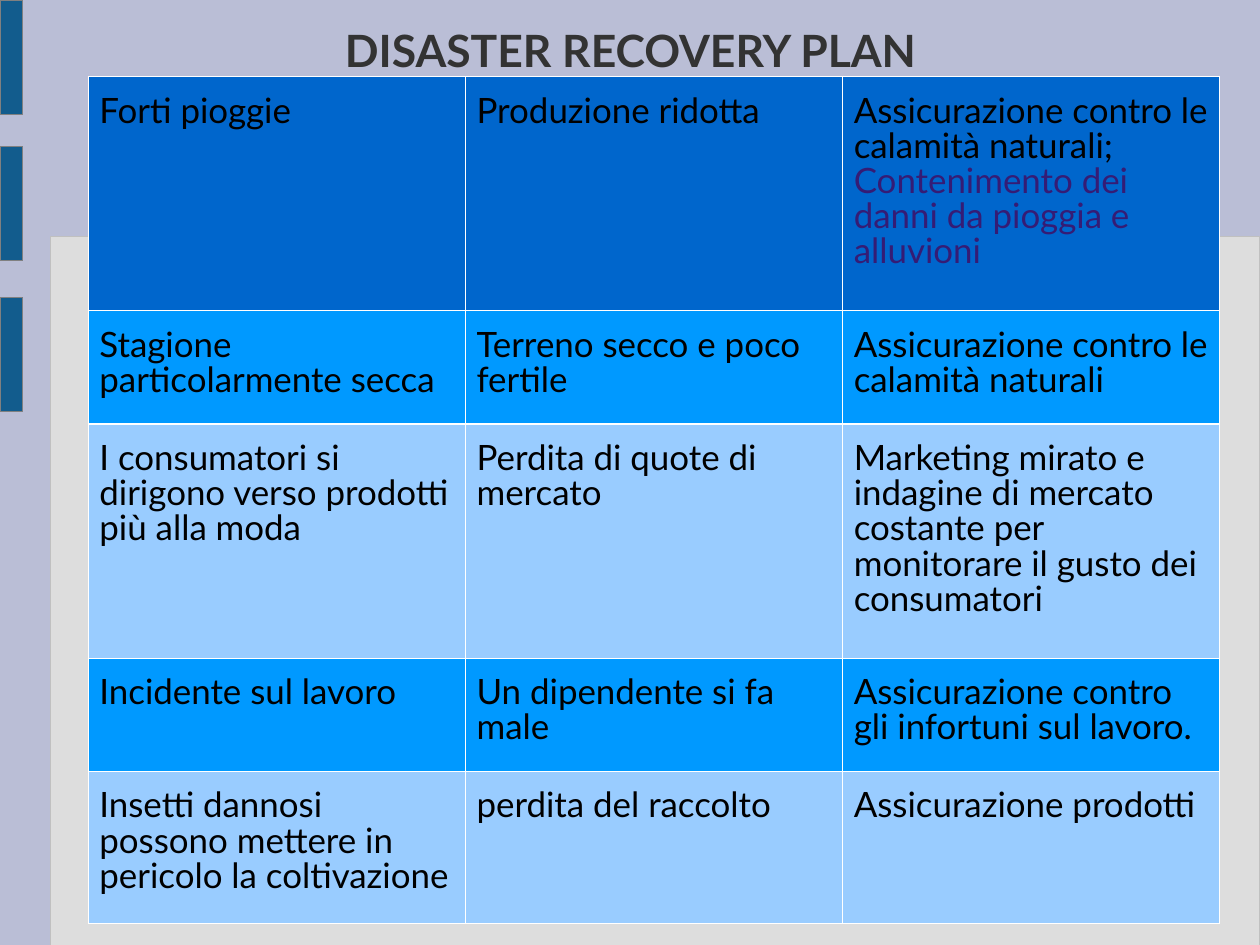
from lxml.etree import SubElement
from pptx import Presentation
from pptx.dml.color import RGBColor
from pptx.enum.shapes import MSO_SHAPE
from pptx.enum.text import MSO_ANCHOR, MSO_AUTO_SIZE, PP_ALIGN
from pptx.oxml.ns import qn
from pptx.util import Inches, Pt

FONT = "Lato"
CM_PER_INCH = 2.54
BAR_TOPS = [0, 2.6, 1.28]
ROW_HEIGHTS = [2.05, 0.99, 2.05, 0.99, 1.33]
ROW_FILLS = ["0066CC", "0099FF", "99CCFF", "0099FF", "99CCFF"]
RISKS = [
    ["Forti pioggie", "Produzione ridotta",
     "Assicurazione contro le calamità naturali;\n"
     "Contenimento dei danni da pioggia e alluvioni"],
    ["Stagione particolarmente secca", "Terreno secco e poco fertile",
     "Assicurazione contro le calamità naturali"],
    ["I consumatori si dirigono verso prodotti più alla moda",
     "Perdita di quote di mercato",
     "Marketing mirato e indagine di mercato costante per monitorare "
     "il gusto dei consumatori"],
    ["Incidente sul lavoro", "Un dipendente si fa male",
     "Assicurazione contro gli infortuni sul lavoro."],
    ["Insetti dannosi possono mettere in pericolo la coltivazione",
     "perdita del raccolto", "Assicurazione prodotti"],
]


def paint(color_format, value):
    """Set a colour from a hex string."""
    color_format.rgb = RGBColor.from_string(value)


def fill_solid(fill, value):
    """Make a fill solid in the given colour."""
    fill.solid()
    paint(fill.fore_color, value)


def style_paragraph(para, size, color, spacing, bold=False):
    """Format the line spacing and the runs of a paragraph."""
    para.line_spacing = spacing
    for span in para.runs:
        span.font.name = FONT
        span.font.size = Pt(size)
        span.font.bold = bold
        paint(span.font.color, color)


def set_margins(target, left, top, right, bottom):
    """Set the inner margins of a cell or text frame in inches."""
    target.margin_left, target.margin_top = Inches(left), Inches(top)
    target.margin_right, target.margin_bottom = Inches(right), Inches(bottom)


def add_block(page, left, top, width, height, fill, line):
    """Add a plain square-cornered background block."""
    block = page.shapes.add_shape(
        MSO_SHAPE.ROUNDED_RECTANGLE,
        Inches(left), Inches(top), Inches(width), Inches(height))
    block.adjustments[0] = 0
    block.shadow.inherit = False
    fill_solid(block.fill, fill)
    paint(block.line.color, line)
    block.line.width = Pt(0.75)


def set_title(page, text):
    """Place and format the slide title."""
    title = page.shapes.title
    title.left, title.top = Inches(0.81), Inches(0)
    title.width, title.height = Inches(9.41), Inches(0.9)
    frame = title.text_frame
    frame.text = text
    frame.word_wrap = True
    frame.auto_size = MSO_AUTO_SIZE.NONE
    frame.vertical_anchor = MSO_ANCHOR.MIDDLE
    set_margins(frame, 0, 0.02, 0, 0)
    para = frame.paragraphs[0]
    para.alignment = PP_ALIGN.CENTER
    style_paragraph(para, 28, "333333", 0.93, bold=True)


def add_borders(cell, color):
    """Draw thin lines on the four sides of a cell."""
    properties = cell._tc.get_or_add_tcPr()
    for side in ("lnL", "lnR", "lnT", "lnB"):
        line = SubElement(properties, qn(f"a:{side}"), w=str(Pt(0.75)))
        solid = SubElement(line, qn("a:solidFill"))
        SubElement(solid, qn("a:srgbClr"), val=color)


def fill_cell(cell, text, fill):
    """Write and format one table cell."""
    cell.text = text
    set_margins(cell, 0.1, 0.16, 0.1, 0.05)
    add_borders(cell, "FFFFFF")
    fill_solid(cell.fill, fill)
    for para in cell.text_frame.paragraphs:
        style_paragraph(para, 22, "000000", 0.84)


def add_risk_table(page):
    """Add the table of risks, effects and remedies."""
    table = page.shapes.add_table(
        len(RISKS), 3, Inches(0.77), Inches(0.67),
        Inches(9.9), Inches(sum(ROW_HEIGHTS))).table
    for column in table.columns:
        column.width = Inches(3.3)
    for row, height, fill, texts in zip(table.rows, ROW_HEIGHTS, ROW_FILLS, RISKS):
        row.height = Inches(height)
        for cell, text in zip(row.cells, texts):
            fill_cell(cell, text, fill)
    containment = table.cell(0, 2).text_frame.paragraphs[1]
    style_paragraph(containment, 22, "351C75", 0.84)


def main():
    """Build and save the slide."""
    deck = Presentation()
    deck.slide_width = Inches(28 / CM_PER_INCH)
    deck.slide_height = Inches(21 / CM_PER_INCH)
    page = deck.slides.add_slide(deck.slide_layouts[5])
    fill_solid(page.background.fill, "BABED6")
    add_block(page, 0.44, 2.07, 10.58, 6.2, "DDDDDD", "C0C0C0")
    for top in BAR_TOPS:
        add_block(page, 0, top, 0.2, 1, "125C8D", "808080")
    set_title(page, "DISASTER RECOVERY PLAN")
    add_risk_table(page)
    deck.save("out.pptx")


if __name__ == "__main__":
    main()
